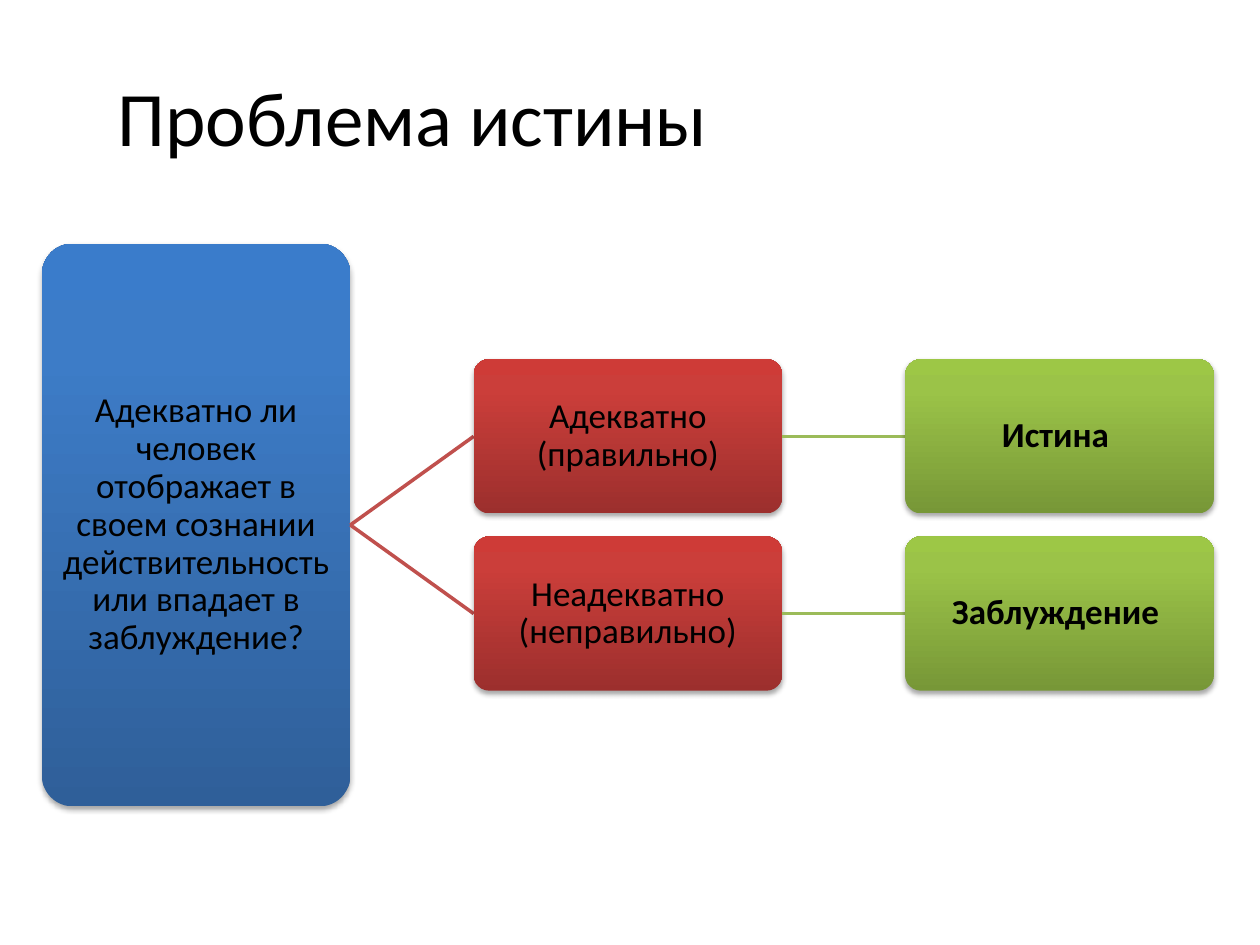
from lxml import etree
from pptx import Presentation
from pptx.dml.color import RGBColor
from pptx.enum.shapes import MSO_CONNECTOR, MSO_SHAPE
from pptx.enum.text import MSO_ANCHOR, PP_ALIGN
from pptx.oxml import parse_xml
from pptx.oxml.ns import qn
from pptx.util import Pt

ROUNDED = MSO_SHAPE.ROUNDED_RECTANGLE
STRAIGHT = MSO_CONNECTOR.STRAIGHT
MIDDLE = MSO_ANCHOR.MIDDLE
CENTER = PP_ALIGN.CENTER
NAMESPACE = "http://schemas.openxmlformats.org/drawingml/2006/main"

BLUE = ("2F5F99", "3D7CC7", "3A7CCB")
RED = ("9C2F2D", "CB3E3A", "CE3B37")
GREEN = ("779737", "9BC348", "9DC746")
RED_LINE = "C0504D"
GREEN_LINE = "9BBB59"

QUESTION = ("Адекватно ли человек отображает в своем сознании "
            "действительность или впадает в заблуждение?")
BRANCHES = [
    ("Адекватно (правильно)", "Истина "),
    ("Неадекватно (неправильно)", "Заблуждение "),
]


def color(value):
    return RGBColor.from_string(value)


def write(shape, text, size, margin, bold=False):
    frame = shape.text_frame
    frame.word_wrap = True
    frame.vertical_anchor = MIDDLE
    frame.margin_left = frame.margin_right = Pt(margin)
    frame.margin_top = frame.margin_bottom = Pt(margin)
    frame.text = text
    para = frame.paragraphs[0]
    font = para.runs[0].font
    font.name = "Calibri"
    font.size = Pt(size)
    font.bold = bold
    font.color.rgb = color("000000")
    return para


def add_gradient_and_shadow(shape, colors):
    stops = "".join(
        f'<a:gs pos="{position * 1000}"><a:srgbClr val="{value}"/></a:gs>'
        for position, value in zip((0, 80, 100), colors))
    gradient = parse_xml(
        f'<a:gradFill xmlns:a="{NAMESPACE}" rotWithShape="1">'
        f'<a:gsLst>{stops}</a:gsLst><a:lin ang="16200000" scaled="0"/></a:gradFill>')
    shadow = parse_xml(
        f'<a:outerShdw xmlns:a="{NAMESPACE}" blurRad="{Pt(3.1)}" dist="{Pt(1.8)}" '
        'dir="5400000" rotWithShape="0"><a:srgbClr val="000000">'
        '<a:alpha val="35000"/></a:srgbClr></a:outerShdw>')
    shape.shadow.inherit = False
    shape.line.fill.background()
    properties = shape._element.spPr
    properties.find(qn("a:prstGeom")).addnext(gradient)
    properties.find(qn("a:effectLst")).append(shadow)


def add_node(page, left, middle, width, height, text, colors, bold=False):
    box = page.shapes.add_shape(
        ROUNDED, Pt(left), Pt(middle - height / 2), Pt(width), Pt(height))
    box.adjustments[0] = 0.1
    add_gradient_and_shadow(box, colors)
    para = write(box, text, 20, 0.7, bold)
    para.alignment = CENTER
    para.line_spacing = 0.9


def add_link(page, start, end, line_color):
    link = page.shapes.add_connector(STRAIGHT, *map(Pt, start + end))
    link.line.width = Pt(2)
    link.line.color.rgb = color(line_color)
    etree.SubElement(link._element.spPr, qn("a:effectLst"))


def add_title(page, left, top, width, height):
    box = page.shapes.add_textbox(Pt(left), Pt(top), Pt(width), Pt(height))
    write(box, "Проблема истины", 44, 7.2)


def add_tree(page, left, top, width, height):
    node_width = width / 3.8
    node_height = node_width / 2
    column_step = node_width * 1.4
    row_step = node_height * 1.15
    center = top + height / 2
    first, second, third = (left + column_step * column for column in range(3))

    add_node(page, first, center, node_width, height, QUESTION, BLUE)
    for row, (answer, result) in enumerate(BRANCHES):
        middle = center + (row - 0.5) * row_step
        add_link(page, (first + node_width, center), (second, middle), RED_LINE)
        add_node(page, second, middle, node_width, node_height, answer, RED)
        add_link(page, (second + node_width, middle), (third, middle), GREEN_LINE)
        add_node(page, third, middle, node_width, node_height, result, GREEN, True)


def main():
    deck = Presentation()
    deck.slide_width = Pt(720)
    deck.slide_height = Pt(540)
    page = deck.slides.add_slide(deck.slide_layouts[6])
    add_title(page, 60, 21, 636, 90)
    add_tree(page, 24, 139.2, 669.6, 321.6)
    deck.save("out.pptx")


if __name__ == "__main__":
    main()
